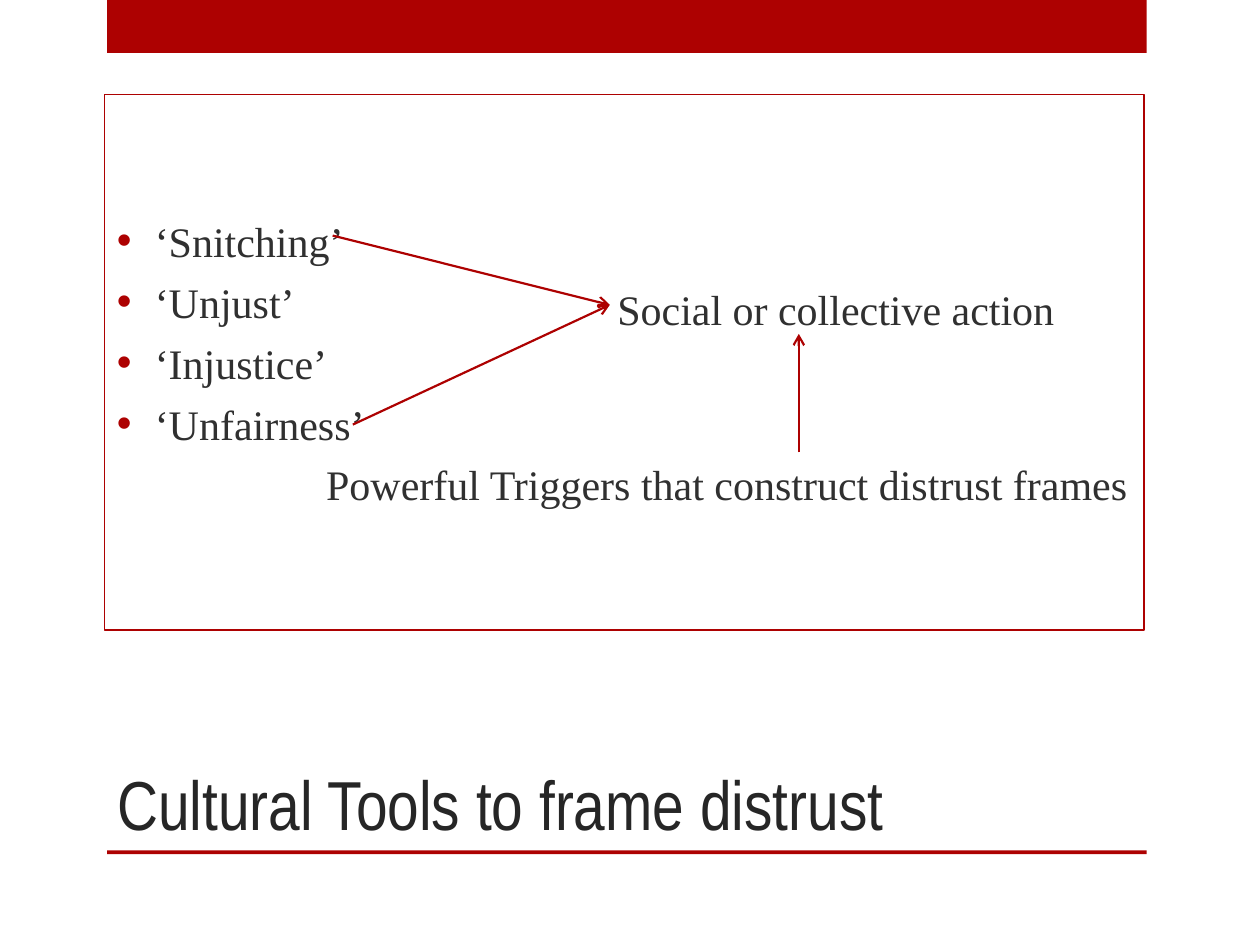
from dataclasses import dataclass

from lxml import etree
from pptx import Presentation
from pptx.dml.color import RGBColor
from pptx.enum.shapes import MSO_CONNECTOR, MSO_SHAPE
from pptx.enum.text import MSO_ANCHOR, PP_ALIGN
from pptx.oxml.ns import qn
from pptx.util import Inches, Pt

RECT = MSO_SHAPE.RECTANGLE
LINE = MSO_CONNECTOR.STRAIGHT
LEFT = PP_ALIGN.LEFT
MIDDLE, BOTTOM = MSO_ANCHOR.MIDDLE, MSO_ANCHOR.BOTTOM

HUES = {"red": "AD0101", "title": "262626", "body": "303030"}
BODY = {"name": "Times New Roman", "size": Pt(24), "bold": False}
HEAD = {"name": "Arial Narrow", "size": Pt(39.6), "bold": False}
TERMS = ["‘Snitching’", "‘Unjust’", "‘Injustice’", "‘Unfairness’"]


@dataclass
class Box:
    x: float
    y: float
    w: float
    h: float

    def place(self) -> tuple:
        return tuple(Inches(v) for v in (self.x, self.y, self.w, self.h))


@dataclass
class Arrow:
    start: tuple
    end: tuple


GOAL = (4.84, 2.42)
BANDS = [Box(0.85, 0, 8.25, 0.42), Box(0.85, 6.75, 8.25, 0.03)]
ARROWS = [
    Arrow((2.64, 1.87), GOAL),
    Arrow((2.8, 3.37), GOAL),
    Arrow((6.34, 3.59), (6.34, 2.65)),
]


def hue(key: str) -> RGBColor:
    return RGBColor.from_string(HUES[key])


def style(para, form: dict, key: str) -> None:
    para.alignment = LEFT
    for name, value in form.items():
        setattr(para.font, name, value)
    para.font.color.rgb = hue(key)


def indent(para, left: float, hang: float = 0) -> None:
    props = para._p.get_or_add_pPr()
    props.set("marL", str(Inches(left)))
    props.set("indent", str(Inches(-hang)))


def bullet(para) -> None:
    props = para._p.get_or_add_pPr()
    tint = etree.Element(qn("a:buClr"))
    etree.SubElement(tint, qn("a:srgbClr"), val=HUES["red"])
    font = etree.Element(qn("a:buFont"), typeface="Arial")
    mark = etree.Element(qn("a:buChar"), char="•")
    # Bullet parts go after spacing and before the default run format
    spot = props.index(props.find(qn("a:defRPr")))
    props[spot:spot] = [tint, font, mark]


def draw_band(slide, box: Box) -> None:
    band = slide.shapes.add_shape(RECT, *box.place())
    band.shadow.inherit = False
    band.fill.solid()
    band.fill.fore_color.rgb = hue("red")
    band.line.fill.background()


def draw_title(slide, box: Box, text: str) -> None:
    title = slide.shapes.title
    title.left, title.top, title.width, title.height = box.place()
    frame = title.text_frame
    frame.text = text
    frame.vertical_anchor = BOTTOM
    style(frame.paragraphs[0], HEAD, "title")


def draw_panel(slide, box: Box, terms: list, note: str) -> None:
    panel = slide.shapes.add_shape(RECT, *box.place())
    panel.shadow.inherit = False
    panel.fill.background()
    panel.line.color.rgb = hue("red")
    panel.line.width = Pt(0.75)
    frame = panel.text_frame
    frame.word_wrap = True
    frame.vertical_anchor = MIDDLE
    for i, text in enumerate([*terms, note]):
        para = frame.paragraphs[0] if i == 0 else frame.add_paragraph()
        para.text = text
        para.space_before = Pt(6)
        style(para, BODY, "body")
        if text == note:
            indent(para, 1.66)
        else:
            indent(para, 0.3, 0.3)
            bullet(para)


def draw_label(slide, box: Box, text: str) -> None:
    frame = slide.shapes.add_textbox(*box.place()).text_frame
    frame.word_wrap = True
    for side in ("left", "top", "right", "bottom"):
        setattr(frame, f"margin_{side}", 0)
    frame.text = text
    style(frame.paragraphs[0], BODY, "body")


def draw_arrow(slide, arrow: Arrow) -> None:
    ends = [Inches(v) for v in (*arrow.start, *arrow.end)]
    line = slide.shapes.add_connector(LINE, *ends)
    line.line.color.rgb = hue("red")
    line.line.width = Pt(1.25)
    props = line._element.spPr
    etree.SubElement(props.find(qn("a:ln")), qn("a:tailEnd"), type="arrow")
    etree.SubElement(props, qn("a:effectLst"))


def main() -> None:
    deck = Presentation()
    deck.slide_width, deck.slide_height = Inches(10), Inches(7.5)
    slide = deck.slides.add_slide(deck.slide_layouts[5])

    # Bands and title
    for box in BANDS:
        draw_band(slide, box)
    draw_title(slide, Box(0.83, 5.64, 7.42, 1.11),
               "Cultural Tools to frame distrust")

    # Terms, outcome and arrows
    draw_panel(slide, Box(0.83, 0.75, 8.25, 4.25), TERMS,
               "Powerful Triggers that construct distrust frames")
    draw_label(slide, Box(4.9, 2.25, 3.7, 0.38),
               "Social or collective action")
    for arrow in ARROWS:
        draw_arrow(slide, arrow)

    deck.save("out.pptx")


if __name__ == "__main__":
    main()
